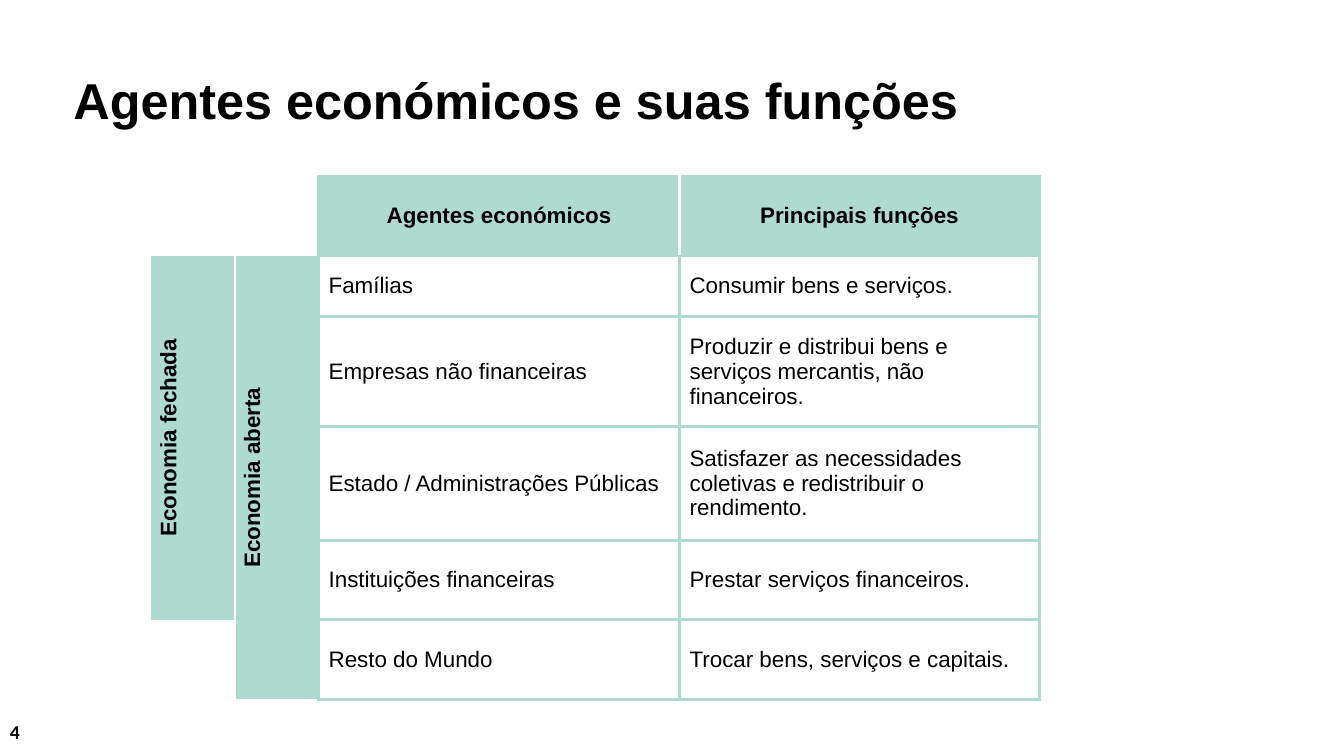
import pptx
import pptx.util
import pptx.dml.color
import pptx.enum.text
import pptx.oxml
import pptx.oxml.ns

Inches = pptx.util.Inches
ALIGN = pptx.enum.text.PP_ALIGN
MIDDLE = pptx.enum.text.MSO_ANCHOR.MIDDLE
MINT, WHITE, BLACK = "AFDAD0", "FFFFFF", "000000"
COLS = [0.83, 0.83, 3.58, 3.57]
ROWS = [0.79, 0.6, 1.09, 1.13, 0.79, 0.79]
HEADS = ("Agentes económicos", "Principais funções")
AGENTS = [
    ("Famílias", "Consumir bens e serviços."),
    ("Empresas não financeiras",
     "Produzir e distribui bens e serviços mercantis, não financeiros."),
    ("Estado / Administrações Públicas",
     "Satisfazer as necessidades coletivas e redistribuir o rendimento."),
    ("Instituições financeiras", "Prestar serviços financeiros."),
    ("Resto do Mundo", "Trocar bens, serviços e capitais."),
]
# Text, last row covered and side borders of each vertical band
BANDS = [
    ("Economia fechada", 4, {"R": WHITE}),
    ("Economia aberta", 5, {"L": WHITE, "R": MINT}),
]


def color(code):
    return pptx.dml.color.RGBColor.from_string(code)


def style(para, size, bold, face="Arial"):
    for run in para.runs:
        font = run.font
        font.name, font.size, font.bold = face, pptx.util.Pt(size), bold
        font.color.rgb = color(BLACK)


def add_text(slide, box, text, size, face="Arial", gap=None):
    frame = slide.shapes.add_textbox(*map(Inches, box)).text_frame
    frame.word_wrap = True
    frame.text = text
    para = frame.paragraphs[0]
    para.line_spacing = gap
    style(para, size, True, face)


def set_edges(cell, edges):
    """Draw the given sides (L, R, T, B) and blank the others."""
    props = cell._tc.get_or_add_tcPr()
    for side in "LRTB":
        line = pptx.oxml.ns.qn("a:ln" + side)
        node = props.makeelement(line, {"w": str(pptx.util.Pt(2.25))})
        props.append(node)
        if side in edges:
            fill = pptx.oxml.parse_xml(
                f'<a:solidFill {pptx.oxml.ns.nsdecls("a")}>'
                f'<a:srgbClr val="{edges[side]}"/></a:solidFill>')
        else:
            fill = pptx.oxml.parse_xml(
                f'<a:noFill {pptx.oxml.ns.nsdecls("a")}/>')
        node.append(fill)


def paint(cell, edges, fill=None):
    set_edges(cell, edges)
    if fill:
        cell.fill.solid()
        cell.fill.fore_color.rgb = color(fill)
    else:
        cell.fill.background()


def write(cell, text, head=False):
    cell.text_frame.text = text
    cell.vertical_anchor = MIDDLE
    para = cell.text_frame.paragraphs[0]
    para.alignment = ALIGN.CENTER if head else ALIGN.LEFT
    style(para, 16, head)


def add_bands(table):
    """Fill the two left columns with merged vertical labels."""
    for col, (text, last, edges) in enumerate(BANDS):
        for row in range(1, last + 1):
            paint(table.cell(row, col), edges, MINT)
        top = table.cell(1, col)
        top.merge(table.cell(last, col))
        write(top, text, True)
        top._tc.get_or_add_tcPr().set("vert", "vert270")
    paint(table.cell(0, 0), {})
    paint(table.cell(0, 1), {"R": MINT})
    paint(table.cell(5, 0), {})


def add_agents(slide, box):
    frame = slide.shapes.add_table(len(ROWS), len(COLS), *map(Inches, box))
    table = frame.table
    table.first_row = table.horz_banding = False
    for part, size in zip(table.columns, COLS):
        part.width = Inches(size)
    for part, size in zip(table.rows, ROWS):
        part.height = Inches(size)
    add_bands(table)
    frame_edges = dict.fromkeys("LRTB", MINT)
    for row, texts in enumerate([HEADS] + AGENTS):
        head = row == 0
        for col, text in enumerate(texts, 2):
            edges = dict(frame_edges)
            if head:
                edges["R" if col == 2 else "L"] = WHITE
            cell = table.cell(row, col)
            paint(cell, edges, MINT if head else None)
            write(cell, text, head)


def main():
    deck = pptx.Presentation()
    deck.slide_width, deck.slide_height = Inches(13.33), Inches(7.5)
    slide = deck.slides.add_slide(deck.slide_layouts[6])
    add_text(slide, (0, 7.09, 3, 0.4), "4", 14, "Calibri")
    add_text(slide, (0.63, 0.7, 12.24, 1.05),
             "Agentes económicos e suas funções", 36, gap=0.9)
    add_agents(slide, (1.5, 1.75, sum(COLS), sum(ROWS)))
    deck.save("out.pptx")


if __name__ == "__main__":
    main()
